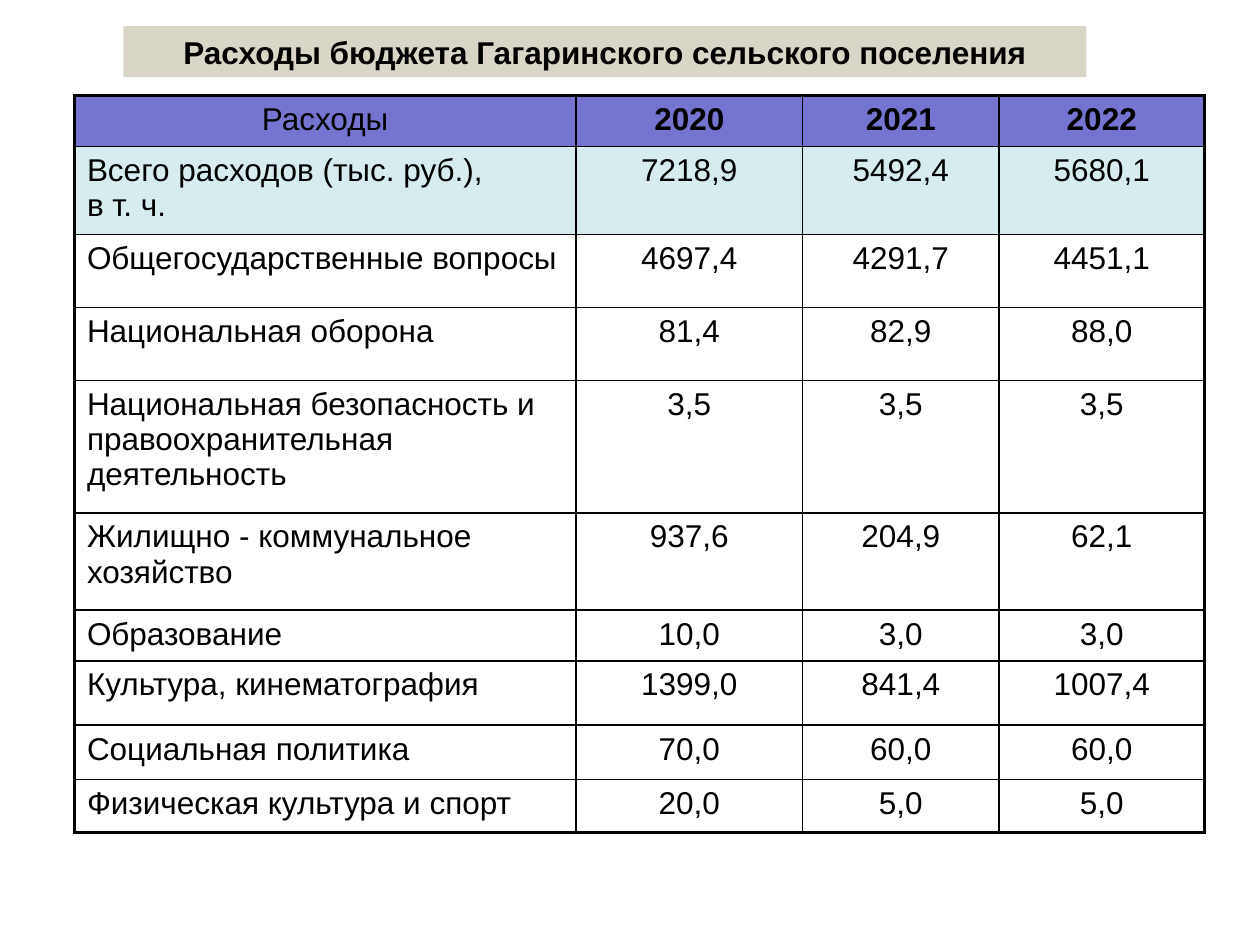
import pptx
import pptx.dml.color
import pptx.enum.shapes
import pptx.enum.text
import pptx.oxml
import pptx.oxml.ns
import pptx.util
from lxml import etree

Cm, Pt = pptx.util.Cm, pptx.util.Pt
ALIGN = pptx.enum.text.PP_ALIGN

COLORS = {"title": "D9D5C7", "header": "7575D1", "total": "D6ECEE", "ink": "000000"}
FONT, FONT_SIZE = "Arial", 18
OUTER_LINE, INNER_LINE = 2.25, 1

HEADING = "Расходы бюджета Гагаринского сельского поселения"
EXPENSES = [
    ("Расходы", "2020", "2021", "2022"),
    ("Всего расходов (тыс. руб.),\nв т. ч.", "7218,9", "5492,4", "5680,1"),
    ("Общегосударственные вопросы", "4697,4", "4291,7", "4451,1"),
    ("Национальная оборона", "81,4", "82,9", "88,0"),
    ("Национальная безопасность и правоохранительная деятельность", "3,5", "3,5", "3,5"),
    ("Жилищно - коммунальное хозяйство", "937,6", "204,9", "62,1"),
    ("Образование", "10,0", "3,0", "3,0"),
    ("Культура, кинематография", "1399,0", "841,4", "1007,4"),
    ("Социальная политика", "70,0", "60,0", "60,0"),
    ("Физическая культура и спорт", "20,0", "5,0", "5,0"),
]
COLUMN_WIDTHS = [10.11, 4.57, 3.96, 4.14]
ROW_HEIGHTS = [1.02, 1.78, 1.47, 1.47, 2.67, 1.96, 1.02, 1.3, 1.09, 1.07]
ROW_FILLS = {0: "header", 1: "total"}


def rgb(name):
    return pptx.dml.color.RGBColor.from_string(COLORS[name])


def write(frame, text, align, bold=False):
    """Put each line of the text in its own paragraph."""
    for number, line in enumerate(text.split("\n")):
        paragraph = frame.add_paragraph() if number else frame.paragraphs[0]
        paragraph.alignment = align
        run = paragraph.add_run()
        run.text = line
        run.font.name = FONT
        run.font.size = Pt(FONT_SIZE)
        run.font.bold = bold
        run.font.color.rgb = rgb("ink")


def fill_solid(target, color):
    target.fill.solid()
    target.fill.fore_color.rgb = rgb(color)


def add_border(cell, side, width):
    qn = pptx.oxml.ns.qn
    line = etree.SubElement(cell._tc.get_or_add_tcPr(), qn(f"a:ln{side}"), w=str(Pt(width)))
    solid = etree.SubElement(line, qn("a:solidFill"))
    etree.SubElement(solid, qn("a:srgbClr"), val=COLORS["ink"])


def add_heading(slide, left, top, width, height):
    band = slide.shapes.add_shape(
        pptx.enum.shapes.MSO_SHAPE.RECTANGLE, Cm(left), Cm(top), Cm(width), Cm(height))
    band.shadow.inherit = False
    band.line.fill.background()
    fill_solid(band, "title")
    band.text_frame.word_wrap = True
    write(band.text_frame, HEADING, ALIGN.CENTER, bold=True)


def add_expense_table(slide, left, top):
    table = slide.shapes.add_table(
        len(EXPENSES), len(COLUMN_WIDTHS), Cm(left), Cm(top),
        Cm(sum(COLUMN_WIDTHS)), Cm(sum(ROW_HEIGHTS))).table
    table.first_row = table.horz_banding = False
    for column, width in zip(table.columns, COLUMN_WIDTHS):
        column.width = Cm(width)
    for row, height in zip(table.rows, ROW_HEIGHTS):
        row.height = Cm(height)

    last_row, last_column = len(EXPENSES) - 1, len(COLUMN_WIDTHS) - 1
    for r, texts in enumerate(EXPENSES):
        for c, text in enumerate(texts):
            cell = table.cell(r, c)
            on_edge = {"L": c == 0, "R": c == last_column, "T": r == 0, "B": r == last_row}
            for side, outer in on_edge.items():
                add_border(cell, side, OUTER_LINE if outer else INNER_LINE)
            if r in ROW_FILLS:
                fill_solid(cell, ROW_FILLS[r])
            else:
                cell.fill.background()
            align = ALIGN.LEFT if c == 0 and r > 0 else ALIGN.CENTER
            write(cell.text_frame, text, align, bold=r == 0 and c > 0)


def main():
    deck = pptx.Presentation()
    deck.slide_width, deck.slide_height = Cm(25.4), Cm(19.05)
    slide = deck.slides.add_slide(deck.slide_layouts[6])
    add_heading(slide, 2.49, 0.53, 19.41, 1.02)
    add_expense_table(slide, 1.5, 1.93)
    deck.save("out.pptx")


if __name__ == "__main__":
    main()
